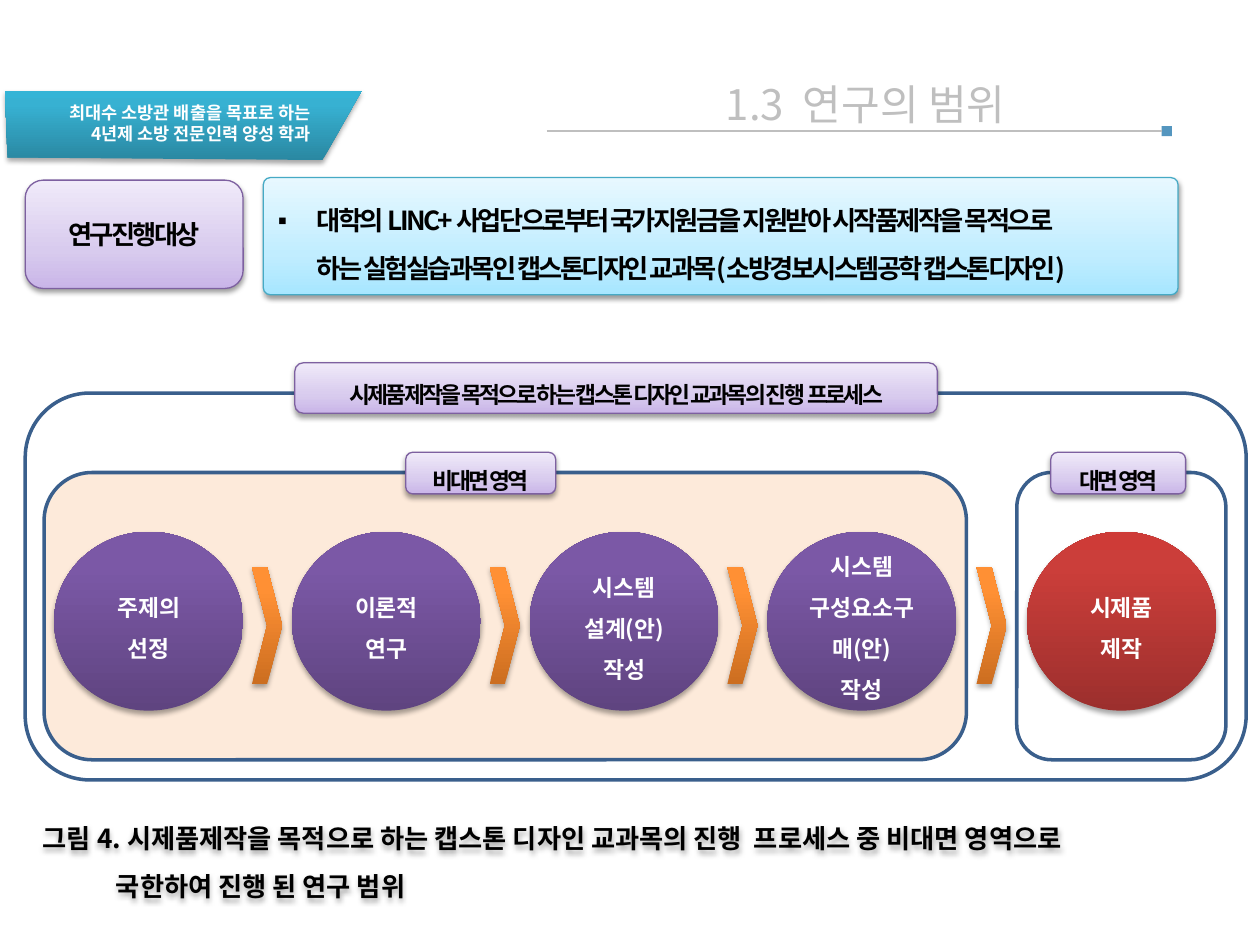
from dataclasses import dataclass

from lxml import etree
from pptx import Presentation
from pptx.dml.color import RGBColor
from pptx.enum.shapes import MSO_CONNECTOR, MSO_SHAPE
from pptx.enum.text import MSO_ANCHOR, MSO_AUTO_SIZE, PP_ALIGN
from pptx.oxml.ns import qn
from pptx.util import Inches, Pt

ROUND, OVAL = MSO_SHAPE.ROUNDED_RECTANGLE, MSO_SHAPE.OVAL
RECT, CHEVRON = MSO_SHAPE.RECTANGLE, MSO_SHAPE.CHEVRON
LEFT, CENTER, RIGHT = PP_ALIGN.LEFT, PP_ALIGN.CENTER, PP_ALIGN.RIGHT
STRAIGHT = MSO_CONNECTOR.STRAIGHT
MIDDLE = MSO_ANCHOR.MIDDLE
NO_FIT = MSO_AUTO_SIZE.NONE


@dataclass(frozen=True)
class Theme:
    font: str = "Noto Sans CJK KR"
    title: int = 24
    body: int = 15
    label: int = 13
    small: int = 10
    tracking: float = -1.5
    black: str = "000000"
    white: str = "FFFFFF"
    grey: str = "BFBFBF"
    accent: str = "5496BF"
    frame: str = "3A5F8C"
    peach: str = "FDEADA"
    lilac_line: str = "7D60A0"
    sky_line: str = "46AAC5"
    # Gradients run from bottom to top
    teal: tuple = ((0, "2A88A2"), (80, "37B1D2"), (100, "34B4D6"))
    lilac: tuple = ((0, "C9B5E8"), (35, "D8CBEE"), (100, "F0EAF9"))
    sky: tuple = ((0, "A7E6FF"), (35, "C1EDFF"), (100, "E7F8FF"))
    purple: tuple = ((0, "5F4480"), (80, "7B58A6"), (100, "7C57A8"))
    red: tuple = ((0, "9C2F2D"), (80, "CB3E3A"), (100, "CE3B37"))
    orange: tuple = ((0, "CC6E20"), (80, "FF9034"), (100, "FF9136"))


T = Theme()


def sub(parent, tag, **attrs):
    return etree.SubElement(parent, qn(tag), {k: str(v) for k, v in attrs.items()})


def inches(box):
    return [Inches(v) for v in box]


def style(sp, fill=None, line=None, width=0.75, shadow=0):
    """Fill with a colour or gradient stops; shadow is its opacity in percent."""
    if fill is None:
        sp.fill.background()
    elif isinstance(fill, str):
        sp.fill.solid()
        sp.fill.fore_color.rgb = RGBColor.from_string(fill)
    else:
        sp.fill.gradient()
        sp.fill.gradient_angle = 90
        stops = sp._element.spPr.find(qn("a:gradFill")).find(qn("a:gsLst"))
        stops.clear()
        for pos, color in fill:
            sub(sub(stops, "a:gs", pos=pos * 1000), "a:srgbClr", val=color)
    if line:
        sp.line.color.rgb = RGBColor.from_string(line)
        sp.line.width = Pt(width)
    else:
        sp.line.fill.background()
    sp.shadow.inherit = False
    if shadow:
        effects = sp._element.spPr.find(qn("a:effectLst"))
        outer = sub(effects, "a:outerShdw", blurRad=Pt(3.1), dist=Pt(1.8),
                    dir=5400000, rotWithShape=0)
        sub(sub(outer, "a:srgbClr", val=T.black), "a:alpha", val=shadow * 1000)


def write(sp, paragraphs, size, color, bold=True, align=CENTER, spacing=1.0,
          tracking=0, hang=0, bullet=None):
    tf = sp.text_frame
    tf.word_wrap, tf.auto_size, tf.vertical_anchor = True, NO_FIT, MIDDLE
    for i, text in enumerate(paragraphs):
        p = tf.add_paragraph() if i else tf.paragraphs[0]
        p.alignment, p.line_spacing = align, spacing
        p.space_before = Pt(0)
        pPr = p._p.get_or_add_pPr()
        pPr.set("marL", str(Inches(hang)))
        pPr.set("indent", str(-Inches(hang)))
        if bullet:
            sub(pPr, "a:buChar", char=bullet)
        for j, line in enumerate(text.split("\n")):
            if j:
                p.add_line_break()
            r = p.add_run()
            r.text = line
            r.font.size, r.font.bold = Pt(size), bold
            r.font.color.rgb = RGBColor.from_string(color)
            r.font.name = T.font
            rPr = r._r.get_or_add_rPr()
            sub(rPr, "a:ea", typeface=T.font)
            if tracking:
                rPr.set("spc", str(int(tracking * 100)))


def add(s, kind, box, **look):
    sp = s.shapes.add_shape(kind, *inches(box))
    style(sp, **look)
    return sp


def place(sp, box):
    sp.left, sp.top, sp.width, sp.height = inches(box)


def pill(s, box, text, size=T.label, spacing=1.5):
    sp = add(s, ROUND, box, fill=T.lilac, line=T.lilac_line, shadow=38)
    write(sp, [text], size, T.black, spacing=spacing, tracking=T.tracking)


def circle(s, x, y, paragraphs, fill):
    sp = add(s, OVAL, (x, y, 1.5, 1.42), fill=fill, shadow=35)
    write(sp, paragraphs, T.label, T.white, spacing=1.5)


def arrow(s, x, y):
    add(s, CHEVRON, (x, y, 0.24, 0.93), fill=T.orange, shadow=35)


def heading(s, box):
    """Slide title with its rule and square end."""
    x, y, w, h = box
    place(s.shapes.title, box)
    write(s.shapes.title, ["1.3  연구의 범위"], T.title, T.grey, bold=False)
    square = add(s, RECT, (x + w - 0.18, y + 0.43, 0.08, 0.08), fill=T.accent)
    rule = s.shapes.add_connector(STRAIGHT, *inches((x, y + 0.47, x + w, y + 0.47)))
    rule.end_connect(square, 1)
    rule.line.color.rgb = RGBColor.from_string(T.grey)
    rule.line.width = Pt(0.75)
    sub(rule._element.spPr, "a:effectLst")


def ribbon(s, box):
    """Slanted banner at the left edge."""
    x, y, w, h = box
    fb = s.shapes.build_freeform(Inches(x + 0.02), Inches(y + h - 0.02))
    corners = [(x, y), (x + w, y), (x + w - 0.31, y + h)]
    fb.add_line_segments([inches(c) for c in corners], close=True)
    style(fb.convert_to_shape(), fill=T.teal, shadow=35)
    tb = s.shapes.add_textbox(*inches((x - 0.08, y + 0.04, w - 0.23, 0.44)))
    write(tb, ["최대수 소방관 배출을 목표로 하는", "4년제 소방 전문인력 양성 학과"],
          T.small, T.white, align=RIGHT)


def subject(s, box):
    """Subject label beside its description."""
    x, y, w, h = box
    pill(s, (x, y + 0.02, 1.73, 0.86), "연구진행대상", T.body, 1.0)
    body = s.placeholders[1]
    place(body, (x + 1.89, y, w - 1.89, h))
    geom = sub(body._element.spPr, "a:prstGeom", prst="roundRect")
    sub(sub(geom, "a:avLst"), "a:gd", name="adj", fmla="val 6000")
    style(body, fill=T.sky, line=T.sky_line, shadow=38)
    write(body, ["대학의 LINC+ 사업단으로부터 국가지원금을 지원받아 시작품제작을 목적으로\n"
                 "하는 실험실습과목인 캡스톤디자인 교과목(소방경보시스템공학 캡스톤디자인)"],
          T.body, T.black, align=LEFT, spacing=1.5, tracking=T.tracking,
          hang=0.31, bullet="▪")


def process(s, box):
    """Framed process: remote steps, then the on-site step."""
    x, y, w, h = box
    add(s, ROUND, box, line=T.frame, width=2)
    pill(s, (x + 2.14, y - 0.24, 5.1, 0.4),
         "시제품제작을 목적으로 하는 캡스톤 디자인 교과목의 진행  프로세스")

    # Remote area
    top, remote_x, remote_w = y + 0.63, x + 0.15, 7.32
    circle_y, arrow_y = top + 0.47, top + 0.75
    add(s, ROUND, (remote_x, top, remote_w, 2.28), fill=T.peach,
        line=T.frame, width=2)
    pill(s, (remote_x + 2.87, top - 0.16, 1.19, 0.33), "비대면 영역")
    steps = [["주제의", "선정"], ["이론적\n연구"], ["시스템\n설계(안)\n작성"],
             ["시스템\n구성요소구매(안)\n작성"]]
    pad = 0.08
    pitch = (remote_w - 2 * pad - 1.5) / (len(steps) - 1)
    for i, step in enumerate(steps):
        left = remote_x + pad + i * pitch
        circle(s, left, circle_y, step, T.purple)
        if i < len(steps) - 1:
            arrow(s, left + 1.57, arrow_y)

    # On-site area
    site_x = remote_x + remote_w + 0.4
    arrow(s, site_x - 0.32, arrow_y)
    add(s, ROUND, (site_x, top, 1.66, 2.28), line=T.frame, width=2)
    pill(s, (site_x + 0.27, top - 0.16, 1.07, 0.33), "대면 영역")
    circle(s, site_x + pad, circle_y, ["시제품\n제작"], T.red)


def caption(s, box):
    sp = add(s, ROUND, box, shadow=35)
    write(sp, ["그림 4. 시제품제작을 목적으로 하는 캡스톤 디자인 교과목의 진행  프로세스 중 비대면 영역으로\n"
               "국한하여 진행 된 연구 범위"],
          T.body, T.black, align=LEFT, spacing=1.5, hang=0.58)


def main():
    prs = Presentation()
    prs.slide_width, prs.slide_height = Inches(10), Inches(7.5)
    s = prs.slides.add_slide(prs.slide_layouts[1])
    heading(s, (4.34, 0.57, 5.06, 0.5))
    ribbon(s, (0.04, 0.72, 2.83, 0.55))
    subject(s, (0.2, 1.41, 9.15, 0.93))
    process(s, (0.2, 3.12, 9.69, 3.07))
    caption(s, (0.2, 6.35, 9.69, 0.86))
    prs.save("out.pptx")


if __name__ == "__main__":
    main()
